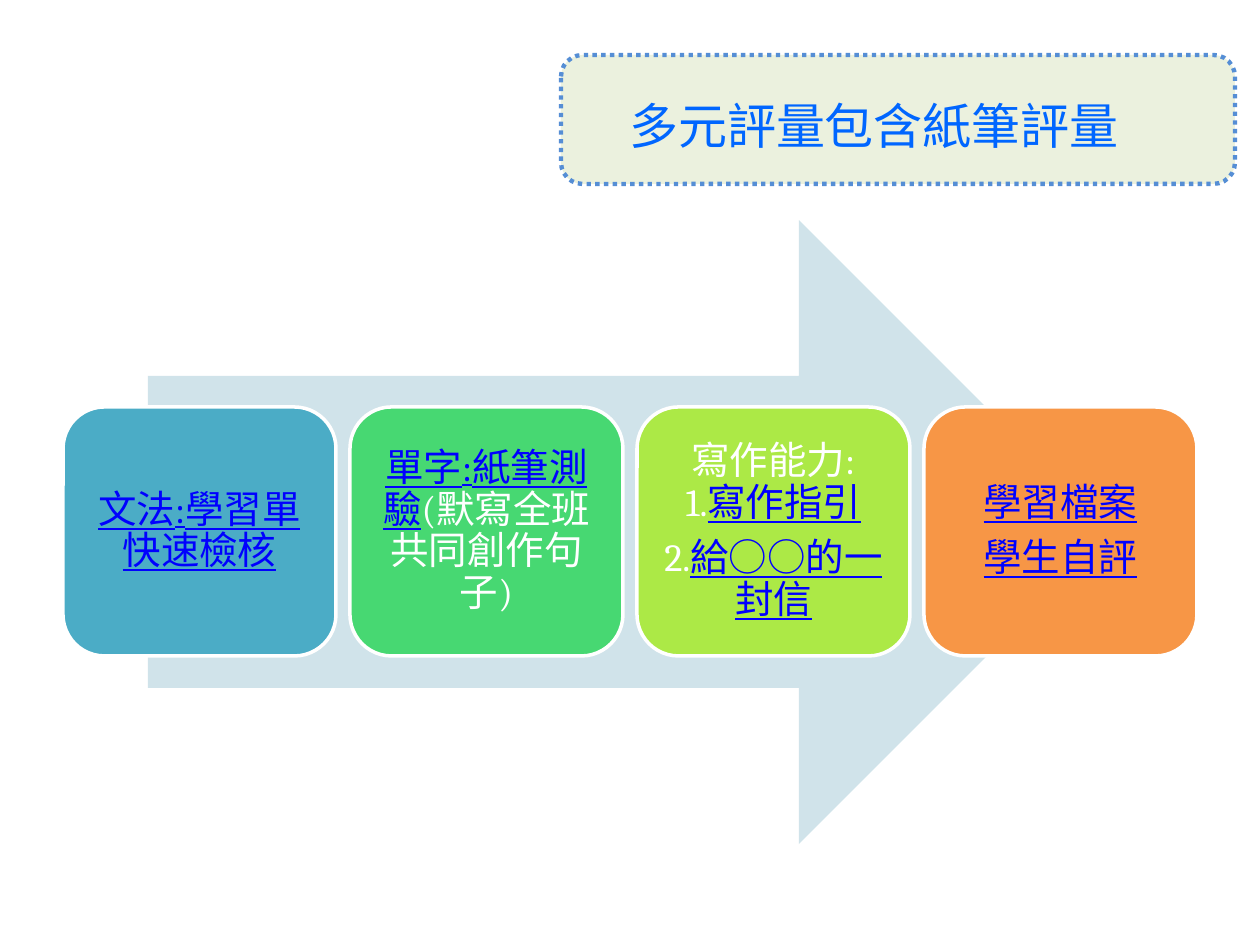
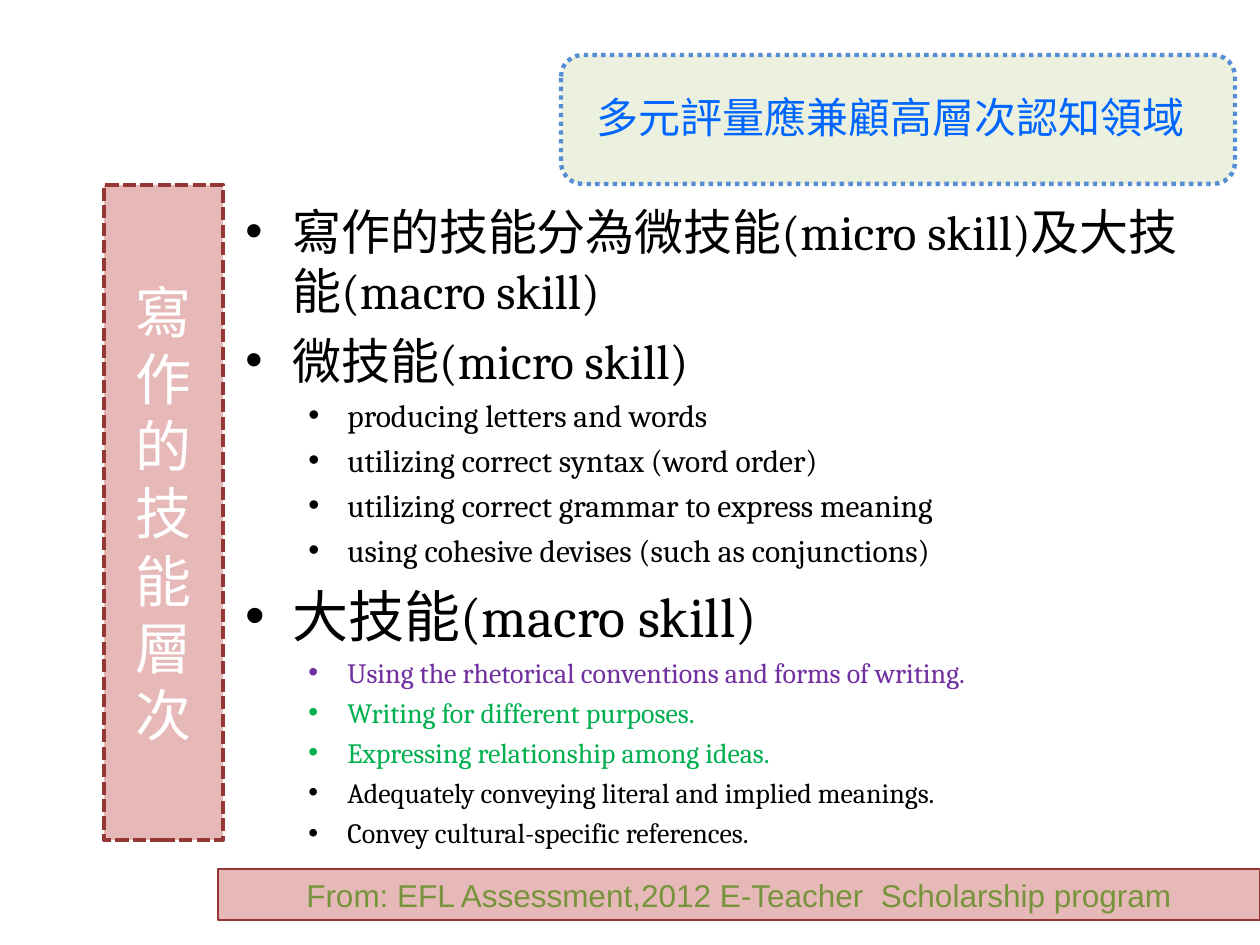
"""Build two slides on multiple assessment and the levels of writing skills."""
from lxml import etree
from pptx import Presentation
from pptx import util as u
from pptx.dml import color
from pptx.enum import dml, shapes, text
from pptx.oxml import ns

PX = u.Inches(1) // 126
SERIF, SANS, CJK = "Cambria", "Arial", "Noto Sans CJK SC"
WHITE, BLACK, LINK, TITLE = "FFFFFF", "000000", "0000FF", "0066FF"
PURPLE, GREEN, OLIVE = "7030A0", "00B050", "77933C"
ROSE, MAROON = "E6B9B8", "953735"
LEFT, CENTER, RIGHT = text.PP_ALIGN.LEFT, text.PP_ALIGN.CENTER, text.PP_ALIGN.RIGHT
ROUNDED = shapes.MSO_SHAPE.ROUNDED_RECTANGLE
RECTANGLE = shapes.MSO_SHAPE.RECTANGLE
DOTS, DASHES = dml.MSO_LINE.ROUND_DOT, dml.MSO_LINE.SQUARE_DOT


def add_box(page, kind, frame, fill=None, line=None):
    """Add a shape, or a text box when kind is None; line is colour, points, dash."""
    edges = [n * PX for n in frame]
    if kind is None:
        box = page.shapes.add_textbox(*edges)
    else:
        box = page.shapes.add_shape(kind, *edges)
        box.shadow.inherit = False
        box.fill.solid()
        box.fill.fore_color.rgb = color.RGBColor.from_string(fill)
        if line:
            box.line.color.rgb = color.RGBColor.from_string(line[0])
            box.line.width = u.Pt(line[1])
            box.line.dash_style = line[2]
        else:
            box.line.fill.background()
    box.text_frame.word_wrap = True
    box.text_frame.vertical_anchor = text.MSO_ANCHOR.MIDDLE
    return box


def write(para, words, size, hue, name=SERIF, align=CENTER, underline=False):
    """Add one formatted run to a paragraph."""
    para.alignment = align
    span = para.add_run()
    span.text = words
    span.font.color.rgb = color.RGBColor.from_string(hue)
    formats = {"size": u.Pt(size), "name": name, "underline": underline}
    for key, value in formats.items():
        setattr(span.font, key, value)
    asian = etree.SubElement(span.font._element, ns.qn("a:ea"))
    asian.set("typeface", CJK)


deck = Presentation()
deck.slide_width, deck.slide_height = 1260 * PX, 945 * PX

titles = [
    ("多元評量包含紙筆評量", (551, 55, 646, 140), 28, SERIF, CENTER),
    ("多元評量應兼顧高層次認知領域", (63, 38, 1134, 158), 24, CJK, RIGHT),
]
pages = []
for words, frame, size, name, align in titles:
    page = deck.slides.add_slide(deck.slide_layouts[6])
    add_box(page, ROUNDED, (561, 55, 674, 129), "EBF1DE", ("558ED5", 2.5, DOTS))
    heading = add_box(page, None, frame)
    write(heading.text_frame.paragraphs[0], words, size, TITLE, name, align)
    pages.append(page)
tools_page, skills_page = pages

add_box(tools_page, shapes.MSO_SHAPE.RIGHT_ARROW, (148, 220, 963, 624), "D0E3EA")

# Each card holds paragraphs of (words, is_link) runs; None is a line break.
cards = [
    ("4BACC6", [[("文法:學習單快速檢核", True)]]),
    ("47D872", [[("單字:紙筆測驗", True), ("(默寫全班共同創作句子)", False)]]),
    ("ACE946", [[("寫作能力:", False), None, ("1.", False), ("寫作指引", True)],
                [("2.", False), ("給○○的一封信", True)]]),
    ("F79646", [[("學習檔案", True)], [("學生自評", True)]]),
]
for index, (fill, paragraphs) in enumerate(cards):
    card = add_box(tools_page, ROUNDED, (63 + 287 * index, 407, 273, 249),
                   fill, (WHITE, 2, None))
    frame = card.text_frame
    for side in ("left", "right", "top", "bottom"):
        setattr(frame, f"margin_{side}", 8 * PX)
    for row, runs in enumerate(paragraphs):
        para = frame.add_paragraph() if row else frame.paragraphs[0]
        para.line_spacing = 0.9
        if row:
            para.space_before = u.Pt(8)
        for run in runs:
            if run is None:
                para.add_line_break()
            else:
                words, is_link = run
                write(para, words, 22, LINK if is_link else WHITE, underline=is_link)

outline = [
    (0, 28, BLACK, "寫作的技能分為微技能(micro skill)及大技能(macro skill)"),
    (0, 28, BLACK, "微技能(micro skill)"),
    (1, 18, BLACK, "producing letters and words"),
    (1, 18, BLACK, "utilizing correct syntax (word order)"),
    (1, 18, BLACK, "utilizing correct grammar to express meaning"),
    (1, 18, BLACK, "using cohesive devises (such as conjunctions)"),
    (0, 32, BLACK, "大技能(macro skill)"),
    (1, 16, PURPLE, "Using the rhetorical conventions and forms of writing."),
    (1, 16, GREEN, "Writing for different purposes."),
    (1, 16, GREEN, "Expressing relationship among ideas."),
    (1, 16, BLACK, "Adequately conveying literal and implied meanings."),
    (1, 16, BLACK, "Convey cultural-specific references."),
]
indents = [(47, -47), (102, -39)]
body = add_box(skills_page, None, (233, 195, 964, 674)).text_frame
body.vertical_anchor = text.MSO_ANCHOR.TOP
for row, (level, size, hue, words) in enumerate(outline):
    para = body.add_paragraph() if row else body.paragraphs[0]
    para.level = level
    props = para._p.get_or_add_pPr()
    for key, value in zip(("marL", "indent"), indents[level]):
        props.set(key, str(value * PX))
    etree.SubElement(props, ns.qn("a:buFont")).set("typeface", SANS)
    etree.SubElement(props, ns.qn("a:buChar")).set("char", "•")
    if row:
        para.space_before = u.Pt(round(size * 0.23, 1))
    write(para, words, size, hue, align=LEFT)

banner = add_box(skills_page, RECTANGLE, (104, 185, 119, 655), ROSE, (MAROON, 2.5, DASHES))
write(banner.text_frame.paragraphs[0], "寫作的技能層次", 32, WHITE)
credit = add_box(skills_page, RECTANGLE, (218, 869, 1042, 51), ROSE, (MAROON, 0.75, None))
write(credit.text_frame.paragraphs[0],
      "From: EFL Assessment,2012 E-Teacher  Scholarship program", 18, OLIVE, SANS)

deck.save("out.pptx")
